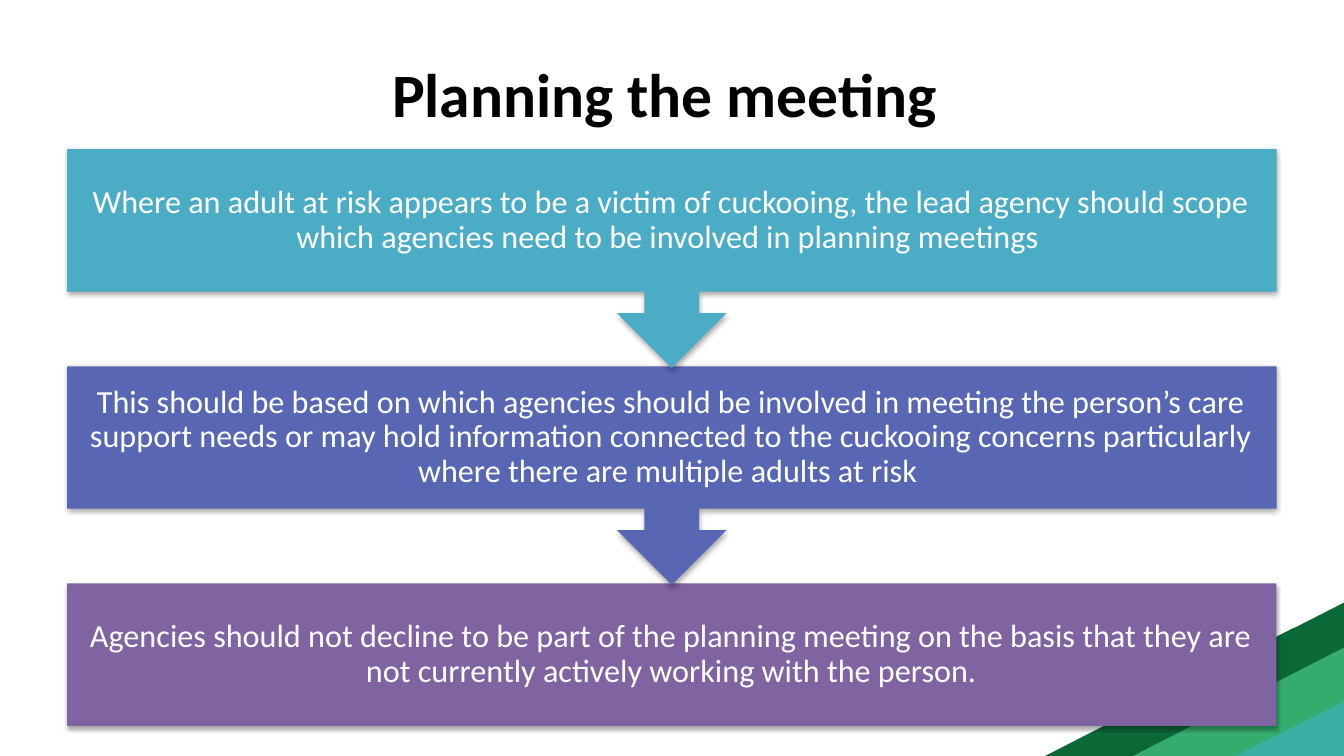
from lxml.etree import SubElement
from pptx import Presentation
from pptx.dml.color import RGBColor
from pptx.enum.shapes import MSO_SHAPE as Preset
from pptx.enum.text import MSO_ANCHOR as Anchor, PP_ALIGN as Align
from pptx.oxml.ns import qn
from pptx.util import Cm, Pt

COLORS = {
    "black": "000000", "white": "FFFFFF", "forest": "0B6938", "green": "35AB6D",
    "teal": "39AFA2", "cyan": "4BACC6", "indigo": "5767B4", "purple": "8064A2",
}
STEPS = [
    ("cyan", "Where an adult at risk appears to be a victim of cuckooing, the lead agency "
             "should scope which agencies need to be involved in planning meetings "),
    ("indigo", "This should be based on which agencies should be involved in meeting the "
               "person’s care support needs or may hold information connected to the cuckooing "
               "concerns particularly where there are multiple adults at risk "),
    ("purple", "Agencies should not decline to be part of the planning meeting on the basis "
               "that they are not currently actively working with the person."),
]
LEFT, WIDTH = 1.69, 30.48
STEP_TOP, STEP_PITCH = 3.76, 5.47
BOX_HEIGHT, CALLOUT_HEIGHT = 3.59, 5.51


class SlideBuilder:
    """Draws styled elements on one slide."""

    def __init__(self, slide, font="Calibri"):
        self.shapes = slide.shapes
        self.font = font

    def color(self, name):
        return RGBColor.from_string(COLORS[name])

    def set_text(self, shape, text, size, color, bold=False):
        frame = shape.text_frame
        frame.word_wrap = True
        frame.vertical_anchor = Anchor.MIDDLE
        para = frame.paragraphs[0]
        para.text = text
        para.alignment = Align.CENTER
        para.font.name = self.font
        para.font.size = Pt(size)
        para.font.bold = bold
        para.font.color.rgb = self.color(color)
        return frame, para

    def title(self, text, left, top, width, height):
        box = self.shapes.add_textbox(Cm(left), Cm(top), Cm(width), Cm(height))
        self.set_text(box, text, 44, "black", bold=True)

    def shape(self, preset, color, left, top, width, height):
        shape = self.shapes.add_shape(preset, Cm(left), Cm(top), Cm(width), Cm(height))
        shape.shadow.inherit = False
        shape.fill.solid()
        shape.fill.fore_color.rgb = self.color(color)
        shape.line.fill.background()
        return shape

    def corner(self, preset, color, place, flips):
        shape = self.shape(preset, color, *place)
        transform = shape._element.spPr.find(qn("a:xfrm"))
        for flip in flips:
            transform.set(flip, "1")

    def soft_shadow(self, shape):
        effects = shape._element.spPr.find(qn("a:effectLst"))
        shadow = SubElement(effects, qn("a:outerShdw"), blurRad=str(Pt(3.1)),
                            dist=str(Pt(1.8)), dir="5400000", rotWithShape="0")
        tint = SubElement(shadow, qn("a:srgbClr"), val=COLORS["black"])
        SubElement(tint, qn("a:alpha"), val="35000")

    def step(self, text, color, top, arrow):
        preset = Preset.DOWN_ARROW_CALLOUT if arrow else Preset.RECTANGLE
        height = CALLOUT_HEIGHT if arrow else BOX_HEIGHT
        box = self.shape(preset, color, LEFT, top, WIDTH, height)
        if arrow:
            box.adjustments[3] = BOX_HEIGHT / CALLOUT_HEIGHT
        self.soft_shadow(box)
        frame, para = self.set_text(box, text, 23, "white")
        frame.margin_left = frame.margin_right = Cm(0.45)
        frame.margin_top = frame.margin_bottom = Cm(0.45)
        para.line_spacing = 0.9


def main():
    deck = Presentation()
    deck.slide_width, deck.slide_height = Cm(33.87), Cm(19.05)
    page = SlideBuilder(deck.slides.add_slide(deck.slide_layouts[6]))

    page.corner(Preset.RIGHT_TRIANGLE, "teal", (31.01, 17.6, 2.95, 1.45), ["flipH"])
    stripes = [("green", (28.27, 16.21, 5.69, 2.84))]
    stripes += [("forest", (left, top, 4.42, 2.26))
                for left, top in [(26.34, 16.79), (28.19, 15.82), (29.54, 15.14)]]
    for color, place in stripes:
        page.corner(Preset.DIAGONAL_STRIPE, color, place, ["flipH", "flipV"])

    page.title("Planning the meeting ", LEFT, 0.76, WIDTH, 3.18)
    last = len(STEPS) - 1
    for index, (color, text) in reversed(list(enumerate(STEPS))):
        page.step(text, color, STEP_TOP + index * STEP_PITCH, arrow=index < last)

    deck.save("out.pptx")


if __name__ == "__main__":
    main()
